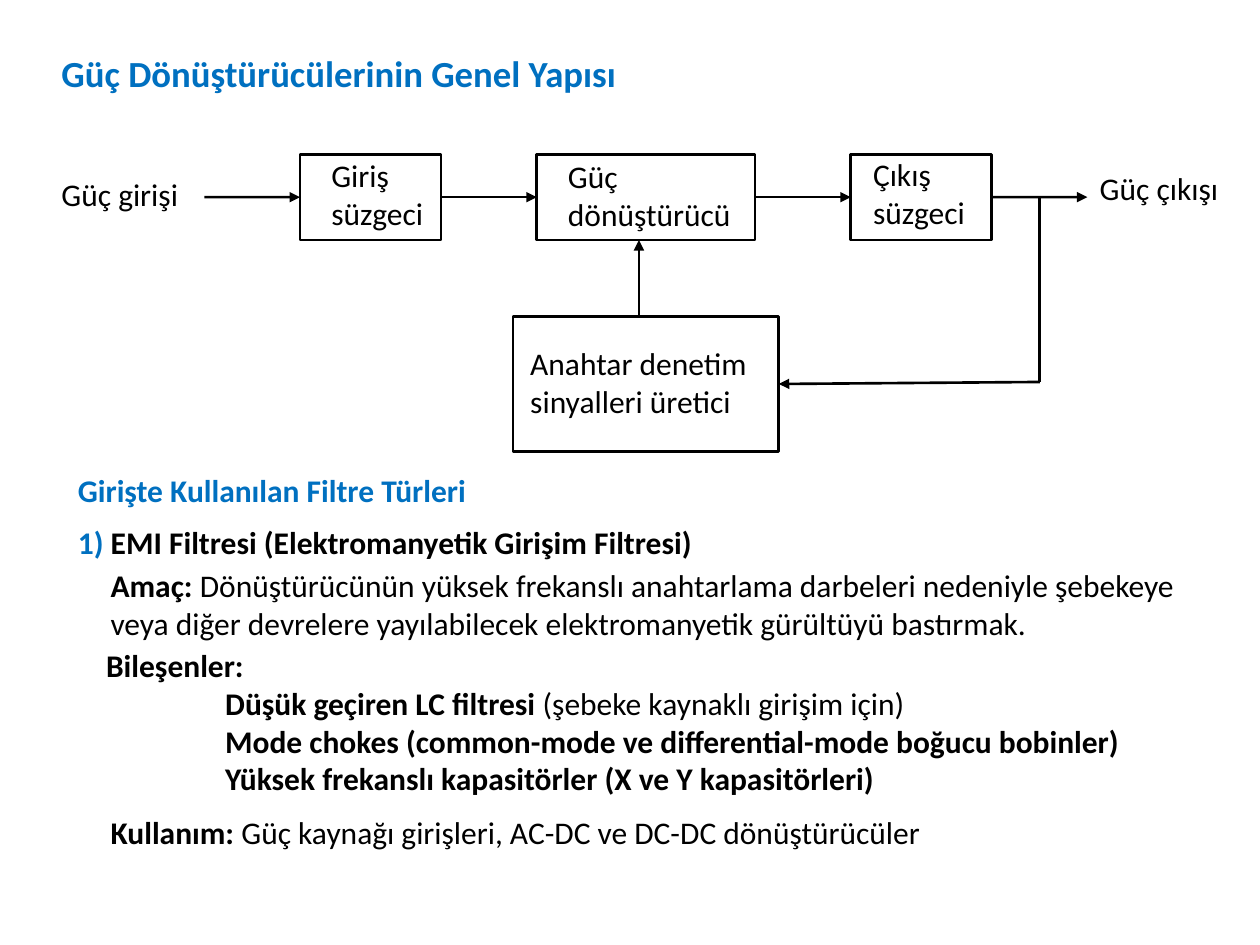
from dataclasses import dataclass

from lxml import etree
from pptx import Presentation
from pptx.dml.color import RGBColor
from pptx.enum.shapes import MSO_CONNECTOR, MSO_SHAPE
from pptx.enum.text import MSO_AUTO_SIZE
from pptx.oxml.ns import qn
from pptx.util import Cm, Pt

STRAIGHT = MSO_CONNECTOR.STRAIGHT
RECTANGLE = MSO_SHAPE.RECTANGLE
FIT_TEXT = MSO_AUTO_SIZE.SHAPE_TO_FIT_TEXT
LEFT, RIGHT = 1, 3


@dataclass(frozen=True)
class Theme:
    font: str = "Calibri"
    accent: RGBColor = RGBColor(0x00, 0x70, 0xC0)
    ink: RGBColor = RGBColor(0x00, 0x00, 0x00)
    title_size: Pt = Pt(21)
    body_size: Pt = Pt(18)
    line_width: Pt = Pt(1.5)


class Diagram:
    def __init__(self, slide, theme):
        self.slide = slide
        self.theme = theme

    def text(self, left, top, width, height, paragraphs, size=None, wrap=True):
        """Each paragraph is (indent in cm, [(text, bold, colour), ...])."""
        box = self.slide.shapes.add_textbox(Cm(left), Cm(top), Cm(width), Cm(height))
        frame = box.text_frame
        frame.word_wrap = wrap
        frame.auto_size = FIT_TEXT
        for index, (indent, runs) in enumerate(paragraphs):
            paragraph = frame.add_paragraph() if index else frame.paragraphs[0]
            if indent:
                paragraph._p.get_or_add_pPr().set("marL", str(Cm(indent)))
            for wording, bold, color in runs:
                run = paragraph.add_run()
                run.text = wording
                style = {"name": self.theme.font, "bold": bold,
                         "size": size or self.theme.body_size}
                for name, value in style.items():
                    setattr(run.font, name, value)
                run.font.color.rgb = color

    def label(self, left, top, width, height, wording):
        self.text(left, top, width, height, [(0, [(wording, False, self.theme.ink)])])

    def heading(self, left, top, width, height, wording, size=None):
        self.text(left, top, width, height,
                  [(0, [(wording, True, self.theme.accent)])], size, wrap=False)

    def block(self, left, top, width, height):
        block = self.slide.shapes.add_shape(
            RECTANGLE, Cm(left), Cm(top), Cm(width), Cm(height))
        block.shadow.inherit = False
        block.fill.background()
        self.stroke(block.line)
        return block

    def stroke(self, line):
        line.color.rgb = self.theme.ink
        line.width = self.theme.line_width

    def line(self, start, end, source=None, target=None, arrow=True):
        """Draw a line; source and target are blocks left at right, entered at left."""
        connector = self.slide.shapes.add_connector(
            STRAIGHT, *(Cm(value) for value in (*start, *end)))
        self.stroke(connector.line)
        if source:
            connector.begin_connect(source, RIGHT)
        if target:
            connector.end_connect(*target)
        if arrow:
            etree.SubElement(connector.line._get_or_add_ln(), qn("a:tailEnd"),
                             type="triangle")
        etree.SubElement(connector._element.spPr, qn("a:effectLst"))


def draw_diagram(diagram):
    top, height = 3.11, 1.73
    middle = top + height / 2
    input_filter = diagram.block(6.05, top, 2.84, height)
    converter = diagram.block(10.82, top, 4.4, height)
    output_filter = diagram.block(17.15, top, 2.84, height)
    controller = diagram.block(10.34, 6.38, 5.36, 2.72)

    for label in (
        (0.99, 3.4, 3.15, 1.02, "Güç girişi"),
        (6.43, 3.02, 3.07, 1.8, "Giriş süzgeci"),
        (11.2, 3.05, 3.84, 1.8, "Güç dönüştürücü"),
        (17.35, 3, 3.07, 1.8, "Çıkış süzgeci"),
        (21.92, 3.28, 3.15, 1.02, "Güç çıkışı"),
        (10.44, 6.81, 5.26, 1.8, "Anahtar denetim sinyalleri üretici"),
    ):
        diagram.label(*label)

    diagram.line((4.12, middle), (6.05, middle), target=(input_filter, LEFT))
    diagram.line((8.89, middle), (10.82, middle), input_filter, (converter, LEFT))
    diagram.line((15.22, middle), (17.15, middle), converter, (output_filter, LEFT))
    diagram.line((19.99, middle), (21.92, middle), output_filter)

    feedback_x, feedback_y = 20.96, 7.7
    diagram.line((feedback_x, middle), (feedback_x, feedback_y), arrow=False)
    diagram.line((feedback_x, feedback_y), (15.7, 7.74), target=(controller, RIGHT))
    diagram.line((12.88, 6.38), (12.88, top + height))


def write_filter_notes(diagram):
    ink, accent = diagram.theme.ink, diagram.theme.accent
    diagram.heading(1.32, 9.37, 8.41, 1.02, "Girişte Kullanılan Filtre Türleri")
    diagram.text(1.32, 10.41, 12.98, 1.02, [(0, [
        ("1) ", True, accent),
        ("EMI Filtresi (Elektromanyetik Girişim Filtresi)", True, ink),
    ])], wrap=False)
    diagram.text(1.98, 11.28, 22.3, 1.8, [(0, [
        ("Amaç:", True, ink),
        (" Dönüştürücünün yüksek frekanslı anahtarlama darbeleri nedeniyle şebekeye "
         "veya diğer devrelere yayılabilecek elektromanyetik gürültüyü bastırmak.",
         False, ink),
    ])])
    diagram.text(1.75, 12.9, 21.39, 3.33, [
        (0.14, [("Bileşenler:", True, ink)]),
        (2.54, [("Düşük geçiren LC filtresi", True, ink),
                (" (şebeke kaynaklı girişim için)", False, ink)]),
        (2.54, [("Mode chokes (common-mode ve differential-mode boğucu bobinler)",
                 True, ink)]),
        (2.54, [("Yüksek frekanslı kapasitörler (X ve Y kapasitörleri)", True, ink)]),
    ])
    diagram.text(1.98, 16.26, 17.2, 1.02, [(0, [
        ("Kullanım:", True, ink),
        (" Güç kaynağı girişleri, AC-DC ve DC-DC dönüştürücüler", False, ink),
    ])])


def main():
    presentation = Presentation()
    presentation.slide_width, presentation.slide_height = Cm(25.4), Cm(19.05)
    slide = presentation.slides.add_slide(presentation.slide_layouts[6])
    theme = Theme()
    diagram = Diagram(slide, theme)
    diagram.heading(0.99, 0.89, 11.79, 1.14, "Güç Dönüştürücülerinin Genel Yapısı",
                    theme.title_size)
    draw_diagram(diagram)
    write_filter_notes(diagram)
    presentation.save("out.pptx")


if __name__ == "__main__":
    main()
